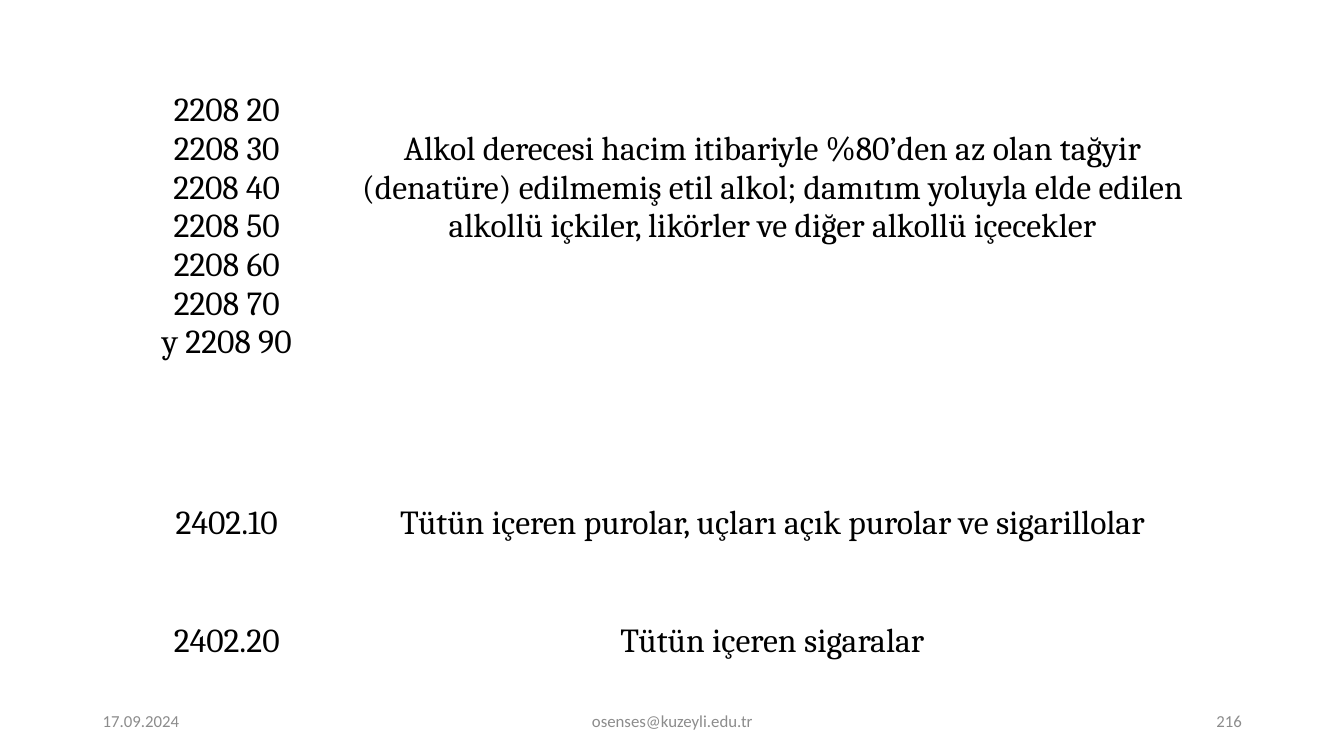
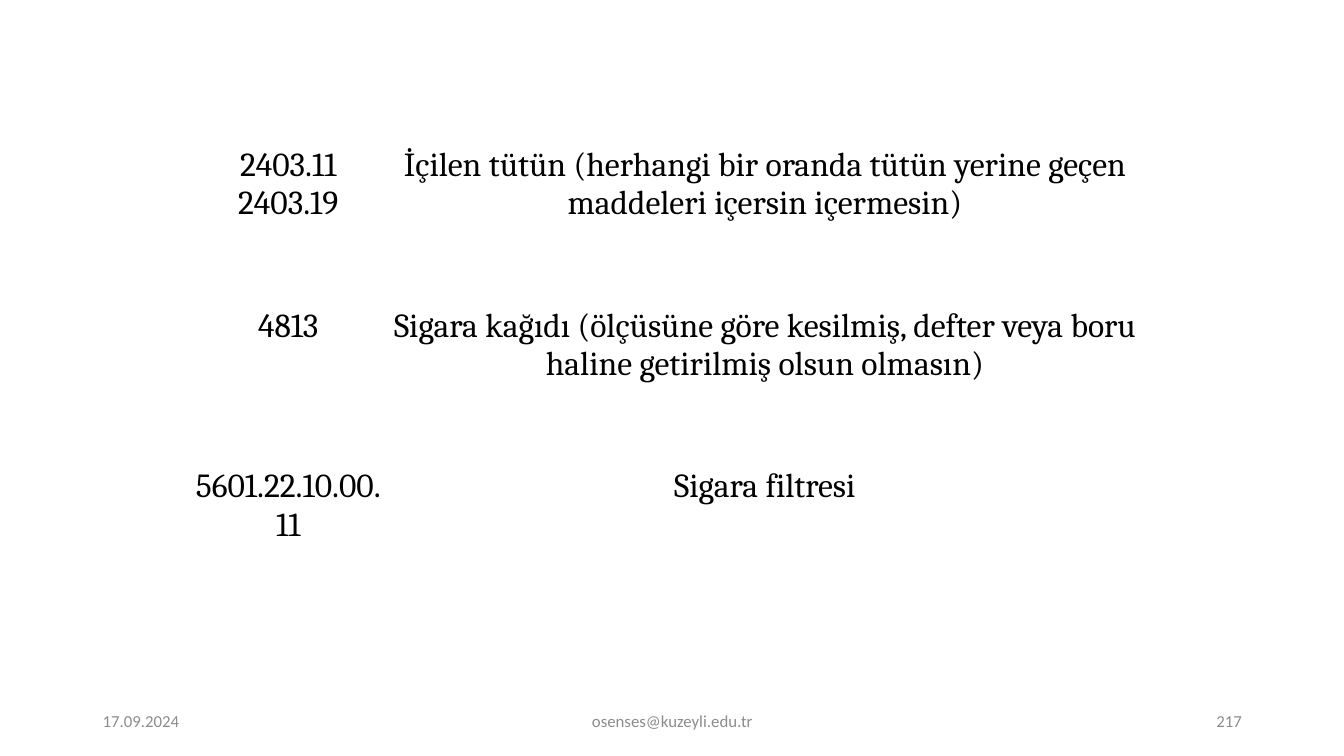
from pptx import Presentation
from pptx.dml.color import RGBColor
from pptx.enum.text import MSO_ANCHOR, PP_ALIGN
from pptx.util import Cm, Pt

LEFT, MID, RIGHT = PP_ALIGN.LEFT, PP_ALIGN.CENTER, PP_ALIGN.RIGHT
TOP, CENTER = MSO_ANCHOR.TOP, MSO_ANCHOR.MIDDLE
COLORS = {"paper": "FFFFFF", "ink": "000000", "muted": "8C8C8C"}
LINE = 0.97

SPIRITS = [
    ("2208 20\n2208 30\n2208 40\n2208 50\n2208 60\n2208 70\ny 2208 90",
     "Alkol derecesi hacim itibariyle %80’den az olan tağyir (denatüre) "
     "edilmemiş etil alkol; damıtım yoluyla elde edilen alkollü içkiler, "
     "likörler ve diğer alkollü içecekler"),
    ("2402.10", "Tütün içeren purolar, uçları açık purolar ve sigarillolar"),
    ("2402.20", "Tütün içeren sigaralar"),
]
TOBACCO = [
    ("2403.11\n2403.19",
     "İçilen tütün (herhangi bir oranda tütün yerine geçen maddeleri "
     "içersin içermesin)"),
    ("4813",
     "Sigara kağıdı (ölçüsüne göre kesilmiş, defter veya boru haline "
     "getirilmiş olsun olmasın)"),
    ("5601.22.10.00.11", "Sigara filtresi"),
]


def color(name):
    return RGBColor.from_string(COLORS[name])


def write(frame, text, size=24, font="Cambria", ink="ink", align=MID):
    frame.word_wrap = True
    for i, line in enumerate(text.split("\n")):
        para = frame.paragraphs[0] if i == 0 else frame.add_paragraph()
        para.alignment = align
        run = para.add_run()
        run.text = line
        run.font.size = Pt(size)
        run.font.name = font
        run.font.bold = False
        run.font.color.rgb = color(ink)


def add_grid(slide, left, top, widths, heights, rows):
    frame = slide.shapes.add_table(
        len(rows), len(widths), Cm(left), Cm(top),
        Cm(sum(widths)), Cm(sum(heights)))
    table = frame.table
    table.first_row = table.horz_banding = False
    for col, width in zip(table.columns, widths):
        col.width = Cm(width)
    for r, (row, height) in enumerate(zip(rows, heights)):
        table.rows[r].height = Cm(height)
        for c, text in enumerate(row):
            cell = table.cell(r, c)
            cell.margin_left = cell.margin_right = 0
            cell.margin_top = cell.margin_bottom = 0
            cell.vertical_anchor = TOP
            cell.fill.solid()
            cell.fill.fore_color.rgb = color("paper")
            write(cell.text_frame, text)
    return table


def add_foot(slide, number):
    parts = [
        (2.34, 7.62, "17.09.2024", LEFT),
        (11.23, 11.43, "osenses@kuzeyli.edu.tr", MID),
        (23.93, 7.62, str(number), RIGHT),
    ]
    for left, width, text, align in parts:
        box = slide.shapes.add_textbox(
            Cm(left), Cm(17.65), Cm(width), Cm(1.02))
        box.text_frame.vertical_anchor = CENTER
        write(box.text_frame, text, size=12, font="Calibri",
              ink="muted", align=align)


def add_page(deck, number):
    slide = deck.slides.add_slide(deck.slide_layouts[6])
    slide.background.fill.solid()
    slide.background.fill.fore_color.rgb = color("paper")
    add_foot(slide, number)
    return slide


def main():
    deck = Presentation()
    deck.slide_width, deck.slide_height = Cm(33.87), Cm(19.05)

    page = add_page(deck, 216)
    table = add_grid(page, 3.05, 2.31, [5.33, 22.17],
                     [10.39, 2.97, 1.47], SPIRITS)
    table.cell(0, 1).margin_top = Cm(LINE)

    page = add_page(deck, 217)
    add_grid(page, 4.93, 3.68, [4.67, 19.35], [4.05] * 3, TOBACCO)

    deck.save("out.pptx")


if __name__ == "__main__":
    main()
